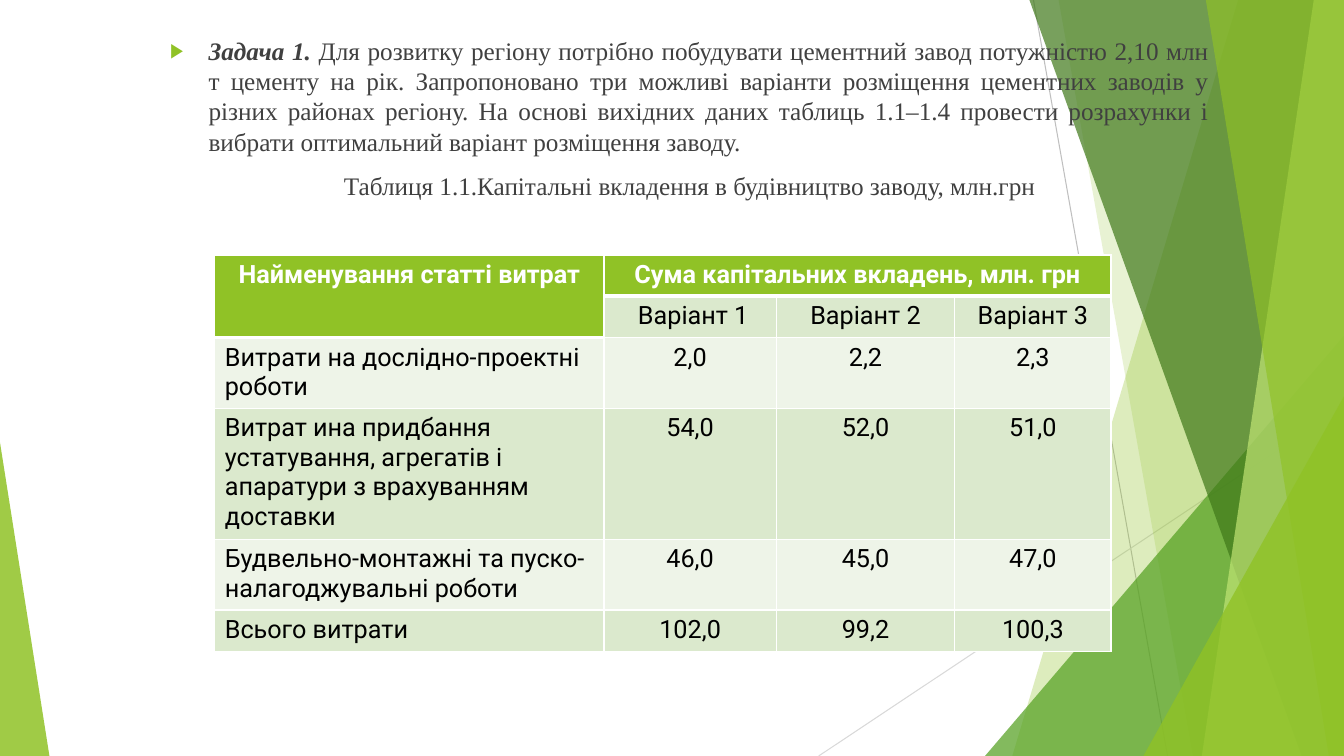
from dataclasses import dataclass

from lxml import etree
from pptx import Presentation
from pptx.dml.color import RGBColor
from pptx.enum.shapes import MSO_CONNECTOR, MSO_SHAPE
from pptx.enum.text import PP_ALIGN
from pptx.oxml.ns import qn
from pptx.util import Inches, Pt

LINE = MSO_CONNECTOR.STRAIGHT
TRIANGLE = MSO_SHAPE.ISOSCELES_TRIANGLE
LEFT, CENTER, JUSTIFY = PP_ALIGN.LEFT, PP_ALIGN.CENTER, PP_ALIGN.JUSTIFY
WIDE, HIGH = 13.33, 7.5


@dataclass(frozen=True)
class Theme:
    lime: str = "90C226"
    green: str = "54A021"
    dark: str = "3F7819"
    pale: str = "C0E474"
    gray: str = "BFBFBF"
    mist: str = "D9D9D9"
    ink: str = "404040"
    black: str = "000000"
    white: str = "FFFFFF"
    bands: tuple = ("EEF4E8", "DBE9CD")
    serif: str = "Times New Roman"
    sans: str = "Roboto"
    size: int = 18


def add_xml(parent, tag, **attrs):
    return etree.SubElement(parent, qn(tag), attrs)


class Page:
    def __init__(self, slide, theme):
        self.shapes = slide.shapes
        self.theme = theme

    def line(self, start, end, color):
        link = self.shapes.add_connector(LINE, *map(Inches, start + end))
        link.line.color.rgb = RGBColor.from_string(color)
        link.line.width = Pt(0.75)
        add_xml(link._element.spPr, "a:effectLst")

    def paint(self, shape, color, alpha):
        """Fill without outline or shadow; alpha is opacity in percent."""
        shape.shadow.inherit = False
        shape.line.fill.background()
        shape.fill.solid()
        shape.fill.fore_color.rgb = RGBColor.from_string(color)
        tint = shape._element.spPr.find(qn("a:solidFill"))[0]
        add_xml(tint, "a:alpha", val=str(alpha * 1000))

    def facet(self, top, foot, color, alpha):
        """Full-height shard from a slanted left side to the slide's right edge."""
        pen = self.shapes.build_freeform(Inches(top), 0)
        rest = [(WIDE, 0), (WIDE, HIGH), (foot, HIGH)]
        pen.add_line_segments([(Inches(x), Inches(y)) for x, y in rest])
        self.paint(pen.convert_to_shape(), color, alpha)

    def wedge(self, left, top, width, peak, color, alpha):
        """Triangle standing on the slide's bottom edge."""
        box = map(Inches, (left, top, width, HIGH - top))
        shape = self.shapes.add_shape(TRIANGLE, *box)
        shape.adjustments[0] = peak
        self.paint(shape, color, alpha)

    def style(self, run, face, color, bold=False, italic=False):
        font = run.font
        font.name, font.size = face, Pt(self.theme.size)
        font.bold, font.italic = bold, italic
        font.color.rgb = RGBColor.from_string(color)

    def bullet(self, para):
        props = para._p.get_or_add_pPr()
        props.set("marL", str(Inches(0.38)))
        props.set("indent", str(Inches(-0.38)))
        add_xml(add_xml(props, "a:buClr"), "a:srgbClr", val=self.theme.lime)
        add_xml(props, "a:buSzPct", val="80000")
        add_xml(props, "a:buFont", typeface="Wingdings 3")
        props[-1].set("typeface", "Arial")
        add_xml(props, "a:buChar", char="▶")

    def body(self, box, lead, task, title):
        frame = self.shapes.add_textbox(*map(Inches, box)).text_frame
        frame.word_wrap = True
        first, last = frame.paragraphs[0], frame.add_paragraph()
        for para, align in ((first, JUSTIFY), (last, CENTER)):
            para.alignment = align
            para.space_before = Pt(10)
        self.bullet(first)
        for para, text, strong in ((first, lead, True), (first, task, False),
                                   (last, title, False)):
            run = para.add_run()
            run.text = text
            self.style(run, self.theme.serif, self.theme.ink, strong, strong)

    def border(self, cell, top, foot):
        props = cell._tc.get_or_add_tcPr()
        sides = (("a:lnL", 1), ("a:lnR", 1), ("a:lnT", top), ("a:lnB", foot))
        for spot, (tag, width) in enumerate(sides):
            edge = add_xml(props, tag, w=str(Pt(width)))
            add_xml(add_xml(edge, "a:solidFill"), "a:srgbClr", val=self.theme.white)
            props.insert(spot, edge)

    def table(self, left, top, cols, heights, rows):
        box = map(Inches, (left, top, sum(cols), sum(heights)))
        grid = self.shapes.add_table(len(rows), len(cols), *box).table
        grid.first_row = grid.horz_banding = False
        for col, width in zip(grid.columns, cols):
            col.width = Inches(width)
        for row, height in zip(grid.rows, heights):
            row.height = Inches(height)
        grid.cell(0, 0).merge(grid.cell(1, 0))
        grid.cell(0, 1).merge(grid.cell(0, len(cols) - 1))

        def is_head(r, c):
            return r == 0 or (r == 1 and c == 0)

        look = self.theme
        for r, row in enumerate(rows):
            for c, text in enumerate(row):
                cell, head = grid.cell(r, c), is_head(r, c)
                cell.fill.solid()
                fill = look.lime if head else look.bands[r % 2]
                cell.fill.fore_color.rgb = RGBColor.from_string(fill)
                below = r > 0 and is_head(r - 1, c) and not head
                self.border(cell, 3 if below else 1, 3 if head else 1)
                if not text:
                    continue
                cell.text_frame.text = text
                para = cell.text_frame.paragraphs[0]
                para.alignment = CENTER if head or c else LEFT
                ink = look.white if head else look.black
                self.style(para.runs[0], look.sans, ink, head)


def main():
    deck = Presentation()
    deck.slide_width, deck.slide_height = Inches(WIDE), Inches(HIGH)
    look = Theme()
    page = Page(deck.slides.add_slide(deck.slide_layouts[6]), look)

    page.line((10.25, 0), (11.58, HIGH), look.gray)
    page.line((WIDE, 4.03), (8.12, HIGH), look.mist)
    page.facet(12.28, 10.04, look.lime, 30)
    page.facet(10.5, 11.83, look.lime, 20)
    page.wedge(9.77, 3.33, 3.56, 1, look.green, 72)
    page.facet(10.21, 12.91, look.dark, 70)
    page.facet(13.03, 11.92, look.pale, 70)
    page.facet(11.96, 13.18, look.lime, 65)
    page.wedge(11.34, 3.93, 1.99, 1, look.lime, 80)
    page.wedge(0, 4.39, 0.49, 0, look.lime, 85)

    page.body(
        (1.59, 0.3, 10.5, 5.68),
        "Задача 1. ",
        "Для розвитку регіону потрібно побудувати цементний завод потужністю "
        "2,10 млн т цементу на рік. Запропоновано три можливі варіанти розміщення "
        "цементних заводів у різних районах регіону. На основі вихідних даних "
        "таблиць 1.1–1.4 провести розрахунки і вибрати оптимальний варіант "
        "розміщення заводу.",
        "Таблиця 1.1.Капітальні вкладення в будівництво заводу, млн.грн",
    )
    page.table(2.13, 2.53, (3.86, 1.71, 1.77, 1.55),
               (0.41, 0.41, 0.69, 1.27, 0.69, 0.41), [
        ("Найменування статті витрат", "Сума капітальних вкладень, млн. грн", "", ""),
        ("", " Варіант 1", "Варіант 2", "Варіант 3"),
        ("Витрати на дослідно-проектні роботи", "2,0", "2,2", "2,3"),
        ("Витрат ина придбання устатування, агрегатів і апаратури з врахуванням "
         "доставки", "54,0", "52,0", "51,0"),
        ("Будвельно-монтажні та пуско-налагоджувальні роботи",
         "46,0", "45,0", "47,0"),
        ("Всього витрати", "102,0", "99,2", "100,3"),
    ])
    deck.save("out.pptx")


if __name__ == "__main__":
    main()
